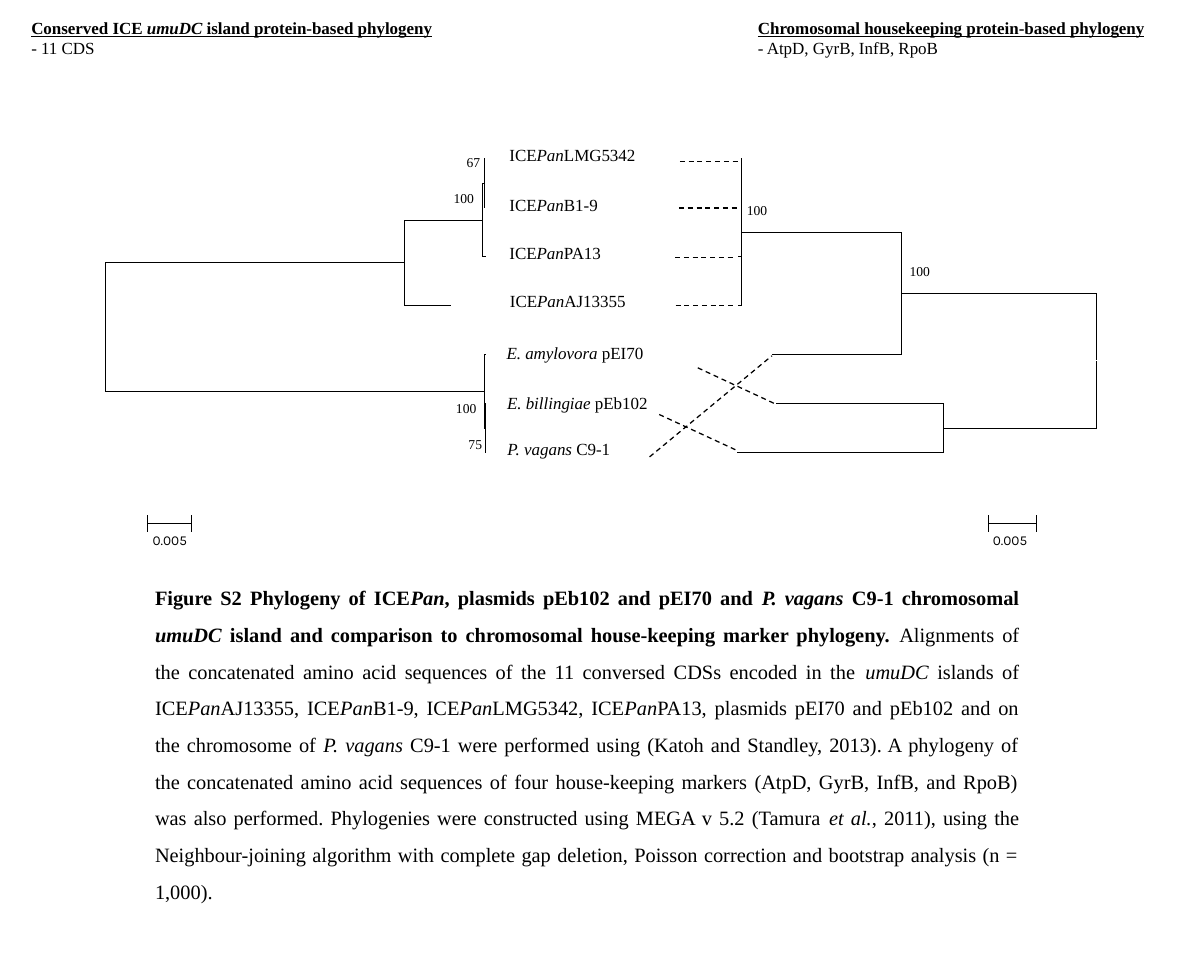
import pptx
import pptx.util
import pptx.dml.color
import pptx.enum.dml
import pptx.enum.shapes
import pptx.enum.text
import pptx.oxml.ns
from lxml import etree

Cm = pptx.util.Cm
Pt = pptx.util.Pt
BLACK = pptx.dml.color.RGBColor(0, 0, 0)
SERIF = "Times New Roman"
SANS = "Karla"
HAIRLINE = 0.01
FIRST_ROW = 3.3
LAST_ROW = 9.4
ROW_STEP = (LAST_ROW - FIRST_ROW) / 6
GAP = 0.02


def row_y(row):
    return FIRST_ROW + ROW_STEP * row


class Figure:
    def __init__(self, slide):
        self.s = slide

    def style_line(self, line, width=HAIRLINE):
        line.color.rgb = BLACK
        line.width = Pt(width)

    def line(self, x1, y1, x2, y2, dashed=False):
        sp = self.s.shapes.add_connector(
            pptx.enum.shapes.MSO_CONNECTOR.STRAIGHT, Cm(x1), Cm(y1), Cm(x2), Cm(y2))
        self.style_line(sp.line, 0.75 if dashed else HAIRLINE)
        if dashed:
            sp.line.dash_style = pptx.enum.dml.MSO_LINE.DASH
        etree.SubElement(sp._element.spPr, pptx.oxml.ns.qn("a:effectLst"))

    def branch(self, x, mid, tip, tip_x):
        start = row_y(mid) + (GAP if tip > mid else -GAP)
        fb = self.s.shapes.build_freeform(Cm(x), Cm(start))
        fb.add_line_segments(
            [(Cm(x), Cm(row_y(tip))), (Cm(tip_x), Cm(row_y(tip)))], close=False)
        sp = fb.convert_to_shape()
        sp.shadow.inherit = False
        sp.fill.background()
        self.style_line(sp.line)

    def node(self, x, upper, upper_x, lower, lower_x):
        mid = (upper + lower) / 2
        self.branch(x, mid, upper, upper_x)
        self.branch(x, mid, lower, lower_x)

    def text(self, box, paragraphs, size, font=SERIF, wrap=False, inset=True):
        sp = self.s.shapes.add_textbox(*[Cm(v) for v in box])
        tf = sp.text_frame
        tf.word_wrap = wrap
        tf.auto_size = pptx.enum.text.MSO_AUTO_SIZE.SHAPE_TO_FIT_TEXT
        if not inset:
            tf.margin_left = tf.margin_right = tf.margin_top = tf.margin_bottom = 0
        for i, pieces in enumerate(paragraphs):
            p = tf.add_paragraph() if i else tf.paragraphs[0]
            for words, bold, underline in pieces:
                for j, part in enumerate(words.split("_")):
                    if part:
                        r = p.add_run()
                        r.text = part
                        r.font.name = font
                        r.font.size = Pt(size)
                        r.font.color.rgb = BLACK
                        r.font.bold = bold
                        r.font.underline = underline
                        r.font.italic = j % 2 == 1
        return tf

    def label(self, words, x, y, width, height, size=8, font=SERIF, inset=False):
        self.text((x, y, width, height), [[(words, False, False)]], size, font, inset=inset)

    def heading(self, title, detail, x, width):
        self.text((x, 0.23, width, 1.35),
                  [[(title, True, True)], [(detail, False, False)]], 10, wrap=True)

    def scale_bar(self, left, right):
        self.line(left, 10.87, right, 10.87)
        for x in (left, right):
            self.line(x, 10.71, x, 11.05)
        self.label("0.005", left + 0.1, 11.04, 0.9, 0.74, font=SANS)

    def caption(self, title, body):
        tf = self.text((2.97, 11.78, 18.45, 7.09),
                       [[(title, True, False), (body, False, False)]], 12, wrap=True)
        p = tf.paragraphs[0]
        p.alignment = pptx.enum.text.PP_ALIGN.JUSTIFY
        p.line_spacing = 1.5


ISLAND_NODES = [
    (10.06, 0, 10.06, 1, 10.06),
    (10.02, 0.5, 10.06, 2, 10.08),
    (8.4, 1.25, 10.02, 3, 9.35),
    (10.09, 5, 10.09, 6, 10.09),
    (10.06, 4, 10.08, 5.5, 10.09),
    (2.19, 2.12, 8.4, 4.75, 10.06),
]
HOUSEKEEPING_NODES = [
    (15.39, 2, 15.34, 3, 15.34),
    (18.72, 1.5, 15.39, 4, 16.05),
    (19.6, 5, 16.13, 6, 15.32),
    (22.77, 2.75, 18.72, 5.5, 19.6),
]
SUPPORT = [
    ("67", 9.69, 3.2, 0.46), ("100", 9.42, 3.94, 0.61),
    ("100", 9.47, 8.3, 0.61), ("75", 9.73, 9.06, 0.46),
    ("100", 15.51, 4.19, 0.56), ("100", 18.89, 5.46, 0.56),
]
TAXA = [
    ("ICE_Pan_LMG5342", 10.33, 2.87, 3.18),
    ("ICE_Pan_B1-9", 10.33, 3.91, 2.36),
    ("ICE_Pan_PA13", 10.33, 4.92, 2.57),
    ("ICE_Pan_AJ13355", 10.34, 5.9, 2.95),
    ("_E. amylovora_ pEI70", 10.27, 6.99, 3.4),
    ("_E. billingiae_ pEb102", 10.28, 8.02, 3.48),
    ("_P. vagans _C9-1", 10.29, 8.99, 2.72),
]
LINKS = [
    (14.12, 3.35, 15.37, 3.35), (14.1, 4.32, 15.37, 4.32),
    (14.02, 5.35, 15.27, 5.35), (14.03, 6.34, 15.29, 6.34),
    (13.69, 8.61, 15.29, 9.35), (14.49, 7.64, 16.08, 8.38),
    (13.49, 9.49, 16.03, 7.39),
]
CAPTION_TITLE = (
    "Figure S2 Phylogeny of ICE_Pan_, plasmids pEb102 and pEI70 and _P. vagans _C9-1 "
    "chromosomal _umuDC _island and comparison to chromosomal house-keeping marker phylogeny. ")
CAPTION_BODY = (
    "Alignments of the concatenated amino acid sequences of the 11 conversed CDSs encoded in "
    "the _umuDC_ islands of ICE_Pan_AJ13355, ICE_Pan_B1-9, ICE_Pan_LMG5342, ICE_Pan_PA13, "
    "plasmids pEI70 and pEb102 and on the chromosome of _P. vagans_ C9-1 were performed using "
    "(Katoh and Standley, 2013). A phylogeny of the concatenated amino acid sequences of four "
    "house-keeping markers (AtpD, GyrB, InfB, and RpoB) was also performed. Phylogenies were "
    "constructed using MEGA v 5.2 (Tamura _et al._, 2011), using the Neighbour-joining "
    "algorithm with complete gap deletion, Poisson correction and bootstrap analysis "
    "(n = 1,000). ")


def main():
    prs = pptx.Presentation()
    prs.slide_width, prs.slide_height = Pt(708.75), Pt(567)
    fig = Figure(prs.slides.add_slide(prs.slide_layouts[6]))
    for node in ISLAND_NODES + HOUSEKEEPING_NODES:
        fig.node(*node)
    fig.branch(15.39, 1.5, 0, 15.39)
    fig.branch(15.39, 2, 1, 15.39)
    fig.line(15.39, row_y(1.5), 15.39, row_y(3))
    for words, x, y, width in SUPPORT:
        fig.label(words, x, y, width, 0.69)
    for words, x, y, width in TAXA:
        fig.label(words, x, y, width, 0.84, size=10, inset=True)
    for link in LINKS:
        fig.line(*link, dashed=True)
    fig.scale_bar(3.07, 3.98)
    fig.scale_bar(20.52, 21.53)
    fig.heading("Conserved ICE _umuDC_ island protein-based phylogeny", "- 11 CDS", 0.4, 9.73)
    fig.heading("Chromosomal housekeeping protein-based phylogeny",
                "- AtpD, GyrB, InfB, RpoB", 15.49, 8.92)
    fig.caption(CAPTION_TITLE, CAPTION_BODY)
    prs.save("out.pptx")


if __name__ == "__main__":
    main()
